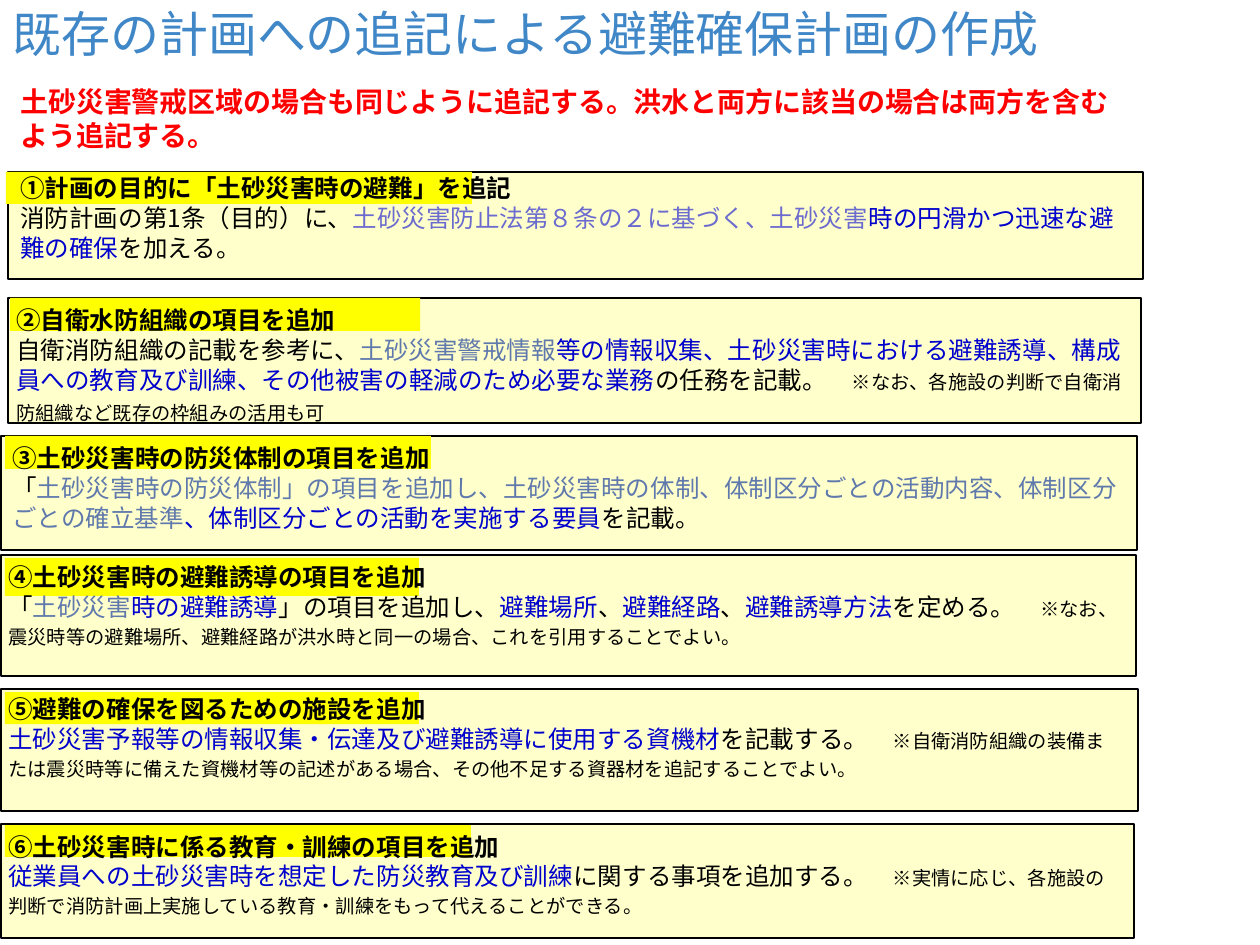
from lxml.etree import SubElement
from pptx import Presentation
from pptx.dml.color import RGBColor
from pptx.enum.shapes import MSO_SHAPE as SHAPE
from pptx.enum.text import MSO_ANCHOR as ANCHOR
from pptx.oxml.ns import qn
from pptx.util import Emu, Pt

PX = 914400 // 126
FONT = "Noto Sans CJK JP"
BLACK, RED, BLUE, SLATE, VIOLET = "000000", "FF0000", "0000CC", "6079AC", "6B6BCF"
TITLE_BLUE, CREAM, YELLOW = "4087C8", "FFFFCC", "FFFF00"
HEAD_SIZE, NOTE_SIZE = 14, 11

TITLE = "既存の計画への追記による避難確保計画の作成"
LEAD = "土砂災害警戒区域の場合も同じように追記する。洪水と両方に該当の場合は両方を含むよう追記する。"

# panel and mark: left, top, width, height; text: left, top, width (all px)
# body: (wording, colour) pairs, then an optional small note
SECTIONS = [
    dict(panel=(8, 172, 1135, 107), mark=(6, 172, 466, 32), text=(8, 167, 1139),
         leading=17, head="①計画の目的に「土砂災害時の避難」を追記",
         body=[("消防計画の第1条（目的）に、", BLACK),
               ("土砂災害防止法第８条の２に基づく、土砂災害", VIOLET),
               ("時の円滑かつ迅速な避難の確保", BLUE), ("を加える。", BLACK)]),
    dict(panel=(8, 298, 1133, 125), mark=(10, 298, 410, 33), text=(4, 299, 1134),
         leading=17, head="②自衛水防組織の項目を追加",
         body=[("自衛消防組織の記載を参考に、", BLACK), ("土砂災害警戒情報", SLATE),
               ("等の情報収集、土砂災害時における避難誘導、構成員への教育及び訓練、"
                "その他被害の軽減のため必要な業務", BLUE), ("の任務を記載。　", BLACK)],
         note="※なお、各施設の判断で自衛消防組織など既存の枠組みの活用も可"),
    dict(panel=(1, 436, 1136, 114), mark=(5, 436, 426, 33), text=(0, 437, 1139),
         leading=17, head="③土砂災害時の防災体制の項目を追加",
         body=[("「", BLACK),
               ("土砂災害時の防災体制」の項目を追加し、土砂災害時の体制、"
                "体制区分ごとの活動内容、体制区分ごとの確立基準", SLATE),
               ("、体制区分ごとの活動を実施する要員", BLUE), ("を記載。", BLACK)]),
    dict(panel=(1, 555, 1135, 121), mark=(5, 558, 414, 38), text=(-4, 556, 1139),
         leading=15, head="④土砂災害時の避難誘導の項目を追加",
         body=[("「", BLACK), ("土砂災害", SLATE), ("時の避難誘導", BLUE),
               ("」の項目を追加し、", BLACK), ("避難場所", BLUE), ("、", BLACK),
               ("避難経路", BLUE), ("、", BLACK), ("避難誘導方法", BLUE),
               ("を定める。　", BLACK)],
         note="※なお、震災時等の避難場所、避難経路が洪水時と同一の場合、これを引用することでよい。"),
    dict(panel=(1, 689, 1137, 122), mark=(5, 692, 414, 32), text=(-4, 688, 1139),
         leading=15, head="⑤避難の確保を図るための施設を追加",
         body=[("土砂災害予報等の情報収集・伝達及び避難誘導に使用する資機材", BLUE),
               ("を記載する。　", BLACK)],
         note="※自衛消防組織の装備または震災時等に備えた資機材等の記述がある場合、"
              "その他不足する資器材を追記することでよい。"),
    dict(panel=(1, 824, 1133, 114), mark=(5, 825, 466, 32), text=(-4, 825, 1135),
         leading=15, head="⑥土砂災害時に係る教育・訓練の項目を追加",
         body=[("従業員への土砂災害時を想定した防災教育及び訓練", BLUE),
               ("に関する事項を追加する。　", BLACK)],
         note="※実情に応じ、各施設の判断で消防計画上実施している教育・訓練をもって代えることができる。"),
]


def px(*values):
    return [Emu(value * PX) for value in values]


def color(code):
    return RGBColor.from_string(code)


def add_panel(slide, place, fill, line=None):
    panel = slide.shapes.add_shape(SHAPE.ROUNDED_RECTANGLE, *px(*place))
    panel.adjustments[0] = 0
    panel.shadow.inherit = False
    panel.fill.solid()
    panel.fill.fore_color.rgb = color(fill)
    if line:
        panel.line.color.rgb = color(line)
        panel.line.width = Pt(0.75)
    else:
        panel.line.fill.background()


def add_text(slide, place):
    frame = slide.shapes.add_textbox(*px(*place)).text_frame
    frame.word_wrap = True
    return frame


def add_span(para, wording, size, code, bold=False):
    span = para.add_run()
    span.text = wording
    font = span.font
    font.size, font.bold, font.name = Pt(size), bold, FONT
    font.color.rgb = color(code)
    SubElement(font._element, qn("a:ea")).set("typeface", FONT)


deck = Presentation()
deck.slide_width, deck.slide_height = px(1260, 945)
slide = deck.slides.add_slide(deck.slide_layouts[6])

# Panels, then heading highlights
for section in SECTIONS:
    add_panel(slide, section["panel"], CREAM, BLACK)
for section in SECTIONS:
    add_panel(slide, section["mark"], YELLOW)

# Title
frame = add_text(slide, (0, -3, 1057, 72))
frame.margin_top = frame.margin_bottom = 0
frame.vertical_anchor = ANCHOR.MIDDLE
add_span(frame.paragraphs[0], TITLE, 28, TITLE_BLUE)

# Lead sentence
para = add_text(slide, (8, 79, 1139, 80)).paragraphs[0]
para.line_spacing = Pt(19)
add_span(para, LEAD, 16, RED, bold=True)

# Section texts
for section in SECTIONS:
    left, top, width = section["text"]
    frame = add_text(slide, (left, top, width, 102))
    heading = frame.paragraphs[0]
    heading.line_spacing = Pt(17)
    add_span(heading, section["head"], HEAD_SIZE, BLACK, bold=True)
    para = frame.add_paragraph()
    para.line_spacing = Pt(section["leading"])
    para.space_before = Pt(17 - section["leading"])
    for wording, code in section["body"]:
        add_span(para, wording, HEAD_SIZE, code)
    if "note" in section:
        add_span(para, section["note"], NOTE_SIZE, BLACK)

deck.save("out.pptx")
